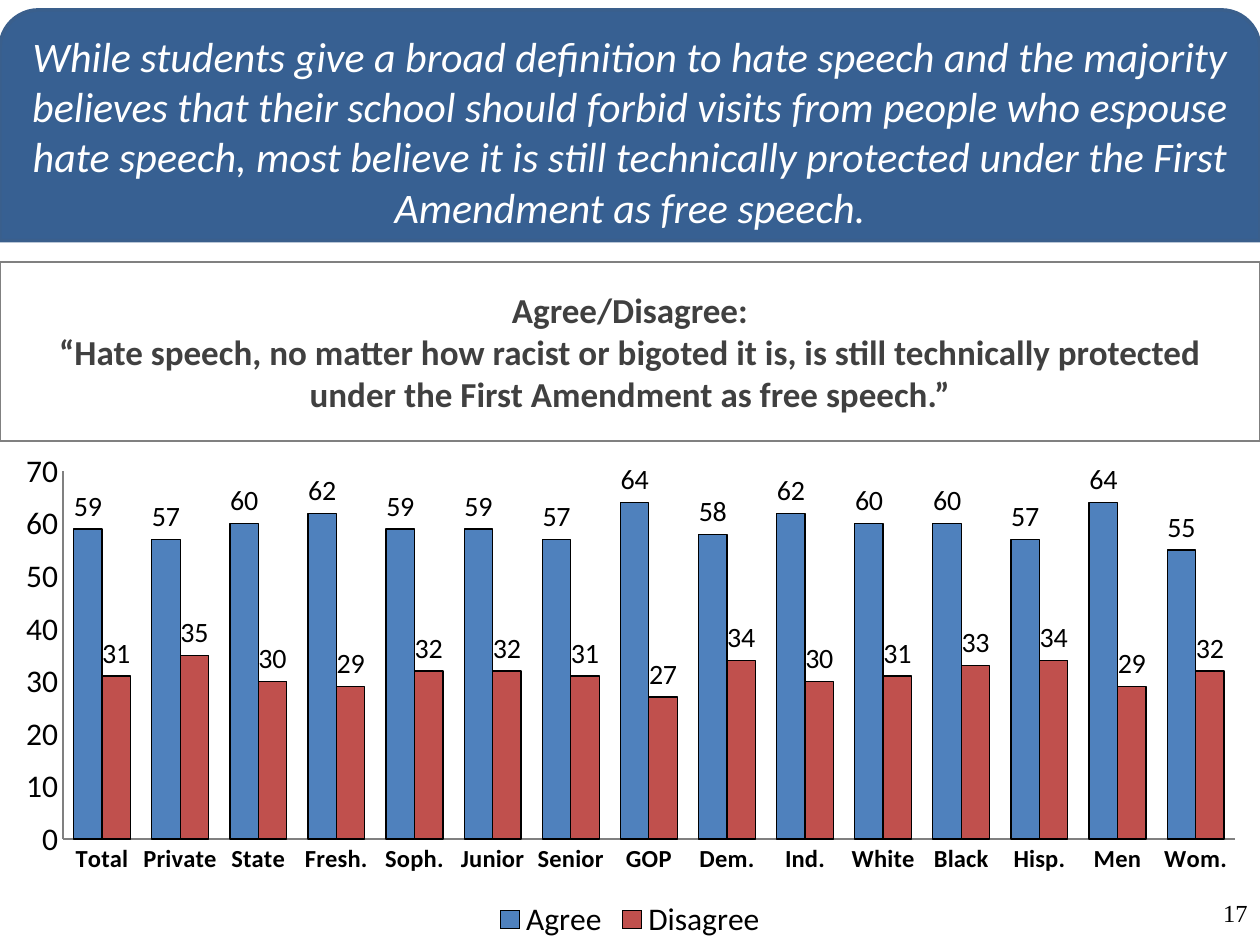
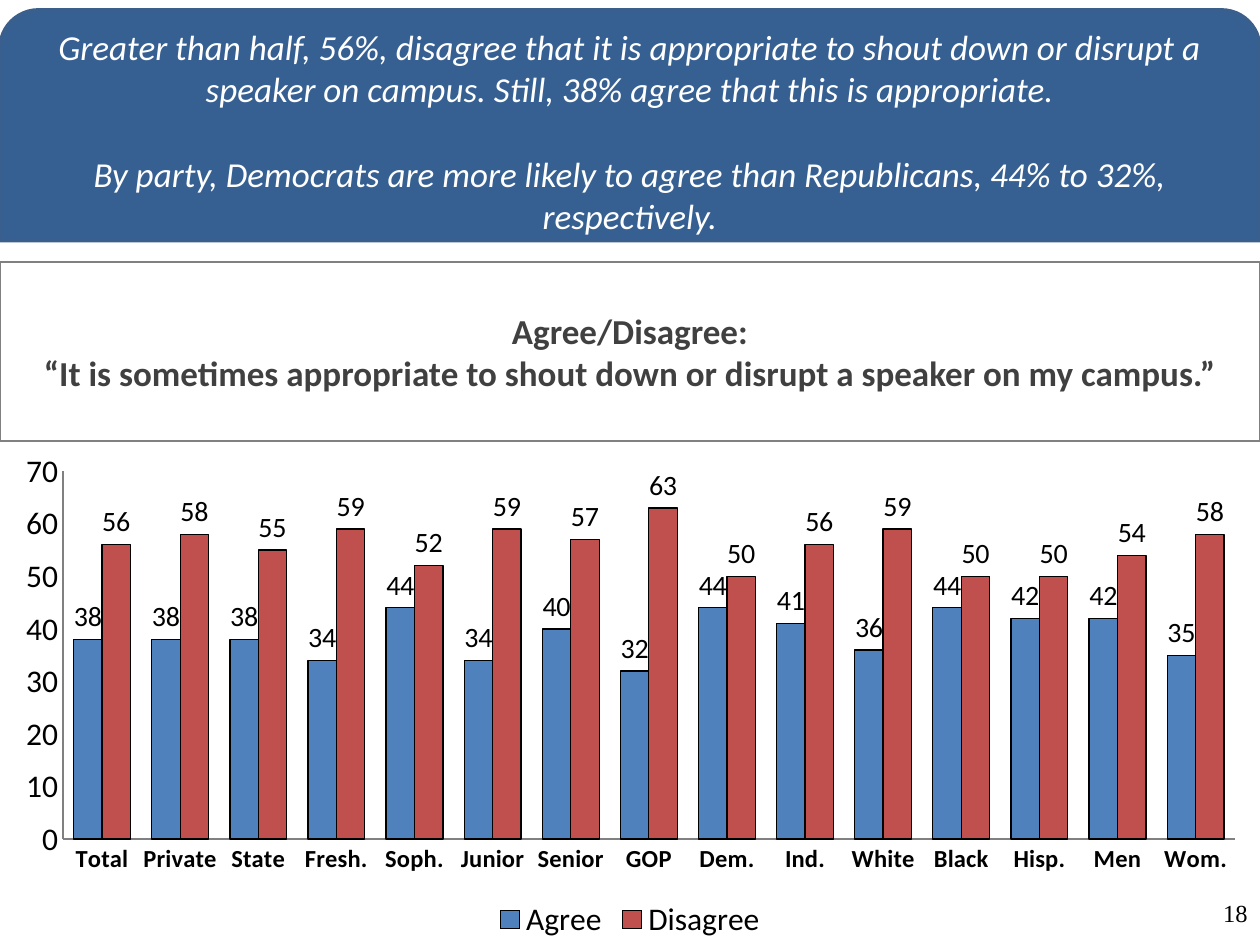
from dataclasses import dataclass

from lxml import etree
from pptx import Presentation
from pptx import util as u
from pptx.chart import data
from pptx.dml import color
from pptx.enum import chart as ce
from pptx.enum import shapes, text


@dataclass(frozen=True)
class Theme:
    """Colours, fonts and type sizes shared by the slides."""
    band: str = "376092"
    band_edge: str = "3A5F8C"
    white: str = "FFFFFF"
    black: str = "000000"
    question: str = "404040"
    rule: str = "808080"
    series: tuple = ("4F81BD", "C0504D")
    font: str = "Calibri"
    number_font: str = "Times New Roman"
    question_size: int = 20
    chart_size: int = 18
    label_size: int = 16
    small_size: int = 14


T = Theme()
WIDTH, HEIGHT = 25.4, 19.05
BAND_BOX = (0, 0.2, WIDTH, 4.65)
QUESTION_BOX = (0, 5.28, WIDTH, 3.61)
CHART_BOX = (0, 8.89, WIDTH, 10.16)
NUMBER_BOX = (24.2, 17.35, 1.2, 1.47)
PLOT_AREA = {"x": 0.05, "y": 0.06, "w": 0.93, "h": 0.73}

GROUPS = ("Total", "Private", "State", "Fresh.", "Soph.", "Junior", "Senior", "GOP",
          "Dem.", "Ind.", "White", "Black", "Hisp.", "Men", "Wom.")

SLIDES = (
    dict(
        number=17,
        finding=("While students give a broad definition to hate speech and the majority "
                 "believes that their school should forbid visits from people who espouse "
                 "hate speech, most believe it is still technically protected under the "
                 "First Amendment as free speech.",),
        finding_size=24,
        question="“Hate speech, no matter how racist or bigoted it is, is still technically "
                 "protected under the First Amendment as free speech.”",
        answers={
            "Agree": (59, 57, 60, 62, 59, 59, 57, 64, 58, 62, 60, 60, 57, 64, 55),
            "Disagree": (31, 35, 30, 29, 32, 32, 31, 27, 34, 30, 31, 33, 34, 29, 32),
        },
    ),
    dict(
        number=18,
        finding=("Greater than half, 56%, disagree that it is appropriate to shout down or "
                 "disrupt a speaker on campus. Still, 38% agree that this is appropriate.",
                 "By party, Democrats are more likely to agree than Republicans, 44% to 32%, "
                 "respectively."),
        finding_size=20,
        question="“It is sometimes appropriate to shout down or disrupt a speaker on my "
                 "campus.”",
        answers={
            "Agree": (38, 38, 38, 34, 44, 34, 40, 32, 44, 41, 36, 44, 42, 42, 35),
            "Disagree": (56, 58, 55, 59, 52, 59, 57, 63, 50, 56, 59, 50, 50, 54, 58),
        },
    ),
)


def rgb(value):
    """Turn a hex string into a colour."""
    return color.RGBColor.from_string(value)


def cm(box):
    """Turn a box in centimetres into lengths."""
    return [u.Cm(v) for v in box]


def set_line(line, hex_color, width):
    """Give an outline its colour and width in points."""
    line.color.rgb = rgb(hex_color)
    line.width = u.Pt(width)


def set_font(font, size, hex_color=T.black, name=T.font, bold=False, italic=False):
    """Apply one type style to a font."""
    font.name, font.size = name, u.Pt(size)
    font.bold, font.italic = bold, italic
    font.color.rgb = rgb(hex_color)


def write(tf, paragraphs, align=text.PP_ALIGN.CENTER, anchor=text.MSO_ANCHOR.MIDDLE,
          gap=0, **style):
    """Fill a text frame with equally styled paragraphs, gap points apart."""
    tf.word_wrap = True
    tf.vertical_anchor = anchor
    for i, line in enumerate(paragraphs):
        p = tf.add_paragraph() if i else tf.paragraphs[0]
        p.alignment = align
        p.space_before = u.Pt(gap if i else 0)
        r = p.add_run()
        r.text = line
        set_font(r.font, **style)


def add_band(s, box, finding, size):
    """Draw the round-topped band with the finding."""
    sp = s.shapes.add_shape(shapes.MSO_SHAPE.ROUND_2_SAME_RECTANGLE, *cm(box))
    sp.shadow.inherit = False
    sp.fill.solid()
    sp.fill.fore_color.rgb = rgb(T.band)
    set_line(sp.line, T.band_edge, 2)
    write(sp.text_frame, finding, gap=1.22 * size, size=size, hex_color=T.white, italic=True)


def add_question(s, box, question):
    """Draw the outlined box with the survey question."""
    sp = s.shapes.add_textbox(*cm(box))
    set_line(sp.line, T.rule, 0.75)
    write(sp.text_frame, ("Agree/Disagree:", question),
          size=T.question_size, hex_color=T.question, bold=True)


def place_plot(chart):
    """Fix the inner plot area as fractions of the chart."""
    area = chart._chartSpace.chart.plotArea
    ns = etree.QName(area).namespace
    for old in area.findall(f"{{{ns}}}layout"):
        area.remove(old)
    layout = etree.Element(f"{{{ns}}}layout")
    manual = etree.SubElement(layout, f"{{{ns}}}manualLayout")
    settings = {"layoutTarget": "inner", "xMode": "edge", "yMode": "edge", **PLOT_AREA}
    for tag, value in settings.items():
        etree.SubElement(manual, f"{{{ns}}}{tag}", val=str(value))
    area.insert(0, layout)


def add_answers(s, box, answers):
    """Draw the clustered columns of answers by group."""
    cd = data.CategoryChartData(number_format="0")
    cd.categories = GROUPS
    for name, values in answers.items():
        cd.add_series(name, values)
    chart = s.shapes.add_chart(ce.XL_CHART_TYPE.COLUMN_CLUSTERED, *cm(box), cd).chart
    set_font(chart.font, T.chart_size)
    chart.has_title = False
    chart.has_legend = True
    chart.legend.position = ce.XL_LEGEND_POSITION.BOTTOM
    chart.legend.include_in_layout = False

    for axis in (chart.category_axis, chart.value_axis):
        axis.has_major_gridlines = False
        axis.major_tick_mark = axis.minor_tick_mark = ce.XL_TICK_MARK.NONE
        set_line(axis.format.line, T.rule, 0.75)
    set_font(chart.category_axis.tick_labels.font, T.small_size, bold=True)
    chart.value_axis.minimum_scale, chart.value_axis.maximum_scale = 0, 70
    chart.value_axis.major_unit = 10

    plot = chart.plots[0]
    plot.gap_width, plot.overlap, plot.vary_by_categories = 75, 0, False
    for series, fill in zip(plot.series, T.series):
        series.format.fill.solid()
        series.format.fill.fore_color.rgb = rgb(fill)
        set_line(series.format.line, T.black, 0.75)
        labels = series.data_labels
        labels.show_value = True
        labels.position = ce.XL_LABEL_POSITION.OUTSIDE_END
        set_font(labels.font, T.label_size)
    place_plot(chart)


def add_number(s, box, number):
    """Write the slide number in the corner."""
    sp = s.shapes.add_textbox(*cm(box))
    write(sp.text_frame, (str(number),), align=text.PP_ALIGN.RIGHT,
          anchor=text.MSO_ANCHOR.BOTTOM, size=T.small_size, name=T.number_font)


def add_survey_slide(prs, number, finding, finding_size, question, answers):
    """Add one slide with finding, question and answers."""
    s = prs.slides.add_slide(prs.slide_layouts[6])
    add_question(s, QUESTION_BOX, question)
    add_band(s, BAND_BOX, finding, finding_size)
    add_answers(s, CHART_BOX, answers)
    add_number(s, NUMBER_BOX, number)


def main():
    """Build and save the deck."""
    prs = Presentation()
    prs.slide_width, prs.slide_height = u.Cm(WIDTH), u.Cm(HEIGHT)
    for content in SLIDES:
        add_survey_slide(prs, **content)
    prs.save("out.pptx")


if __name__ == "__main__":
    main()
